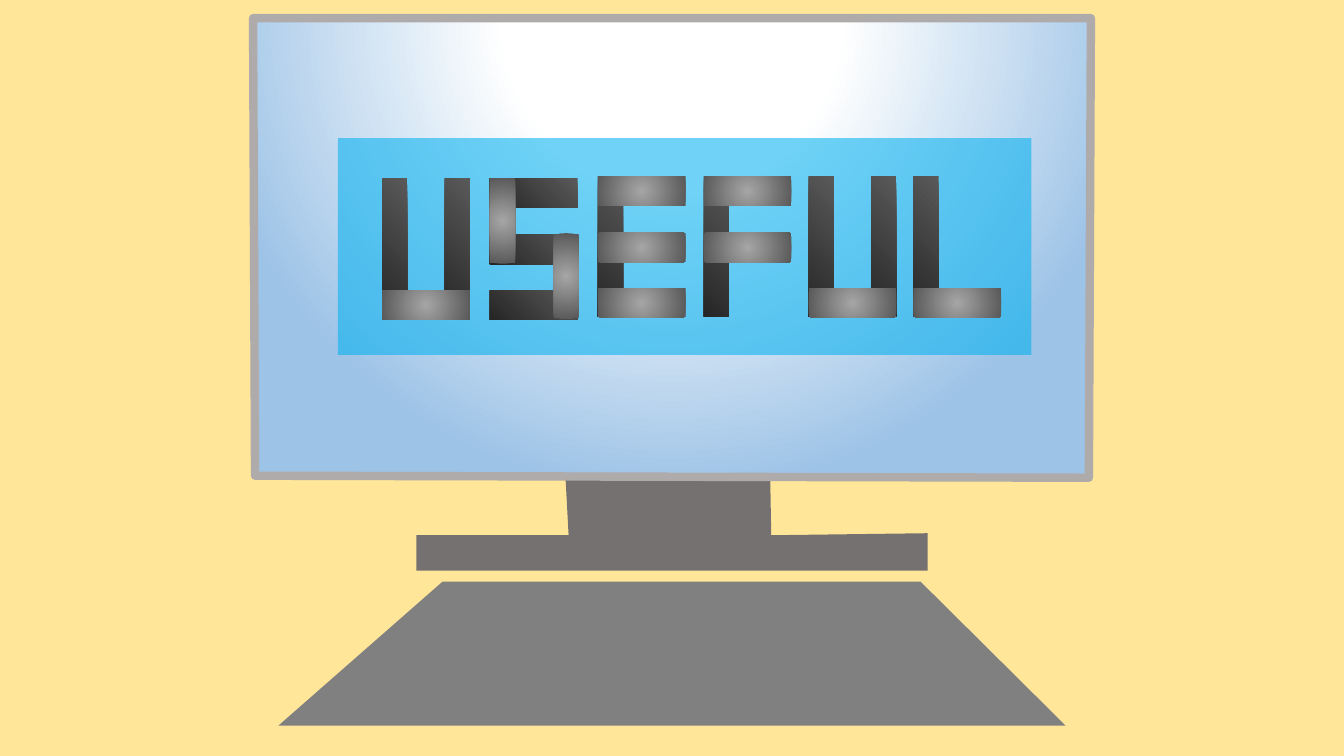
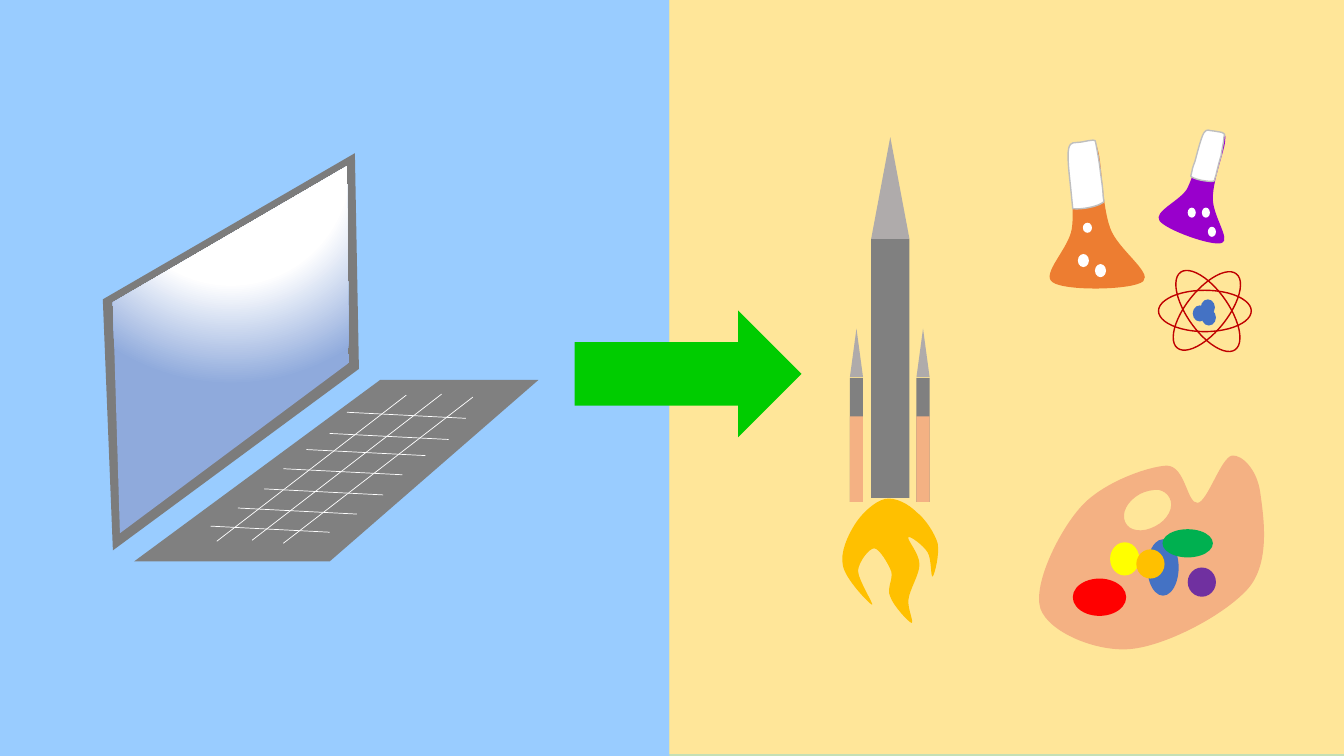
from dataclasses import dataclass

from lxml.etree import SubElement
from pptx import Presentation
from pptx.dml.color import RGBColor
from pptx.enum.shapes import MSO_CONNECTOR, MSO_SHAPE
from pptx.oxml.ns import qn
from pptx.util import Inches, Pt


@dataclass(frozen=True)
class Theme:
    """Colours, gradients and line widths shared by the slides."""
    cream: str = "FFE699"
    mint: str = "C5E0B4"
    sky: str = "99CCFF"
    grey: str = "808080"
    frame: str = "7C7C7C"
    stand: str = "767171"
    silver: str = "AFABAB"
    glass: str = "BFBFBF"
    white: str = "FFFFFF"
    panel: str = "00B0F0"
    arrow: str = "00CC00"
    peach: str = "F4B183"
    gold: str = "FFC000"
    blue: str = "4472C4"
    orange: str = "ED7D31"
    violet: str = "9900CC"
    orbit: str = "C00000"
    red: str = "FF0000"
    yellow: str = "FFFF00"
    green: str = "00B050"
    purple: str = "7030A0"
    dark_bar: tuple = ((0, "595959"), (100, "262626"))
    light_bar: tuple = ((0, "A6A6A6"), (100, "595959"))
    monitor_glow: tuple = ((0, "FFFFFF"), (35, "FFFFFF"), (100, "9DC3E6"))
    laptop_glow: tuple = ((0, "FFFFFF"), (54, "FFFFFF"), (100, "8FAADC"))
    top_focus: tuple = (50, -80, 50, 180)
    centre_focus: tuple = (50, 50, 50, 50)
    hairline: float = 0.5
    thin: float = 1
    bezel: float = 6


T = Theme()

BARS = {
    "left": (0, 0, 0.25, 1.39),
    "right": (0.62, 0, 0.25, 1.39),
    "top": (0, 0, 0.87, 0.29),
    "middle": (0, 0.56, 0.87, 0.29),
    "bottom": (0, 1.11, 0.87, 0.29),
    "upper": (0, 0, 0.25, 0.84),
    "lower": (0.63, 0.55, 0.25, 0.84),
}
GLYPHS = {
    "U": (("left", "right"), ("bottom",)),
    "S": (("top", "middle", "bottom"), ("upper", "lower")),
    "E": (("left",), ("top", "middle", "bottom")),
    "F": (("left",), ("top", "middle")),
    "L": (("left",), ("bottom",)),
}


def paint(sp, fill=None, line=None, width=T.thin):
    """Set a solid or empty fill and outline, without shadow."""
    sp.shadow.inherit = False
    for target, color in ((sp.fill, fill), (sp.line.fill, line)):
        if color:
            target.solid()
            target.fore_color.rgb = RGBColor.from_string(color)
        else:
            target.background()
    if line:
        sp.line.width = Pt(width)
    return sp


def shade(sp, stops, focus=None, angle=135):
    """Give a shape a circular gradient around focus, or a linear one."""
    sp.fill.gradient()
    grad = sp.element.spPr.find(qn("a:gradFill"))
    for child in list(grad):
        grad.remove(child)
    gs_list = SubElement(grad, qn("a:gsLst"))
    for pos, color in stops:
        gs = SubElement(gs_list, qn("a:gs"), pos=str(pos * 1000))
        SubElement(gs, qn("a:srgbClr"), val=color)
    if focus:
        circle = SubElement(grad, qn("a:path"), {"path": "circle"})
        sides = {k: str(v * 1000) for k, v in zip("ltrb", focus)}
        SubElement(circle, qn("a:fillToRect"), sides)
    else:
        SubElement(grad, qn("a:lin"), ang=str(angle * 60000), scaled="0")


def bend(sp):
    """Turn each three line segments of a freeform into one Bezier curve."""
    lines = list(sp.element.iter(qn("a:lnTo")))
    for i in range(0, len(lines), 3):
        curve = lines[i].makeelement(qn("a:cubicBezTo"))
        lines[i].addprevious(curve)
        for ln in lines[i:i + 3]:
            curve.append(ln[0])
            ln.getparent().remove(ln)


class Region:
    """A part of a slide whose lengths are inches from its left top corner."""

    def __init__(self, shapes, left, top):
        self.shapes, self.left, self.top = shapes, left, top

    def at(self, x, y):
        """Return slide coordinates of a point in the region."""
        return Inches(self.left + x), Inches(self.top + y)

    def shape(self, kind, box, fill=None, line=None):
        """Add a preset shape."""
        x, y, w, h = box
        sp = self.shapes.add_shape(kind, *self.at(x, y), Inches(w), Inches(h))
        return paint(sp, fill, line)

    def rect(self, box, fill=None):
        """Add a rectangle."""
        return self.shape(MSO_SHAPE.RECTANGLE, box, fill)

    def oval(self, box, fill=None, line=None):
        """Add an ellipse."""
        return self.shape(MSO_SHAPE.OVAL, box, fill, line)

    def polygon(self, contours, fill=None, line=None, width=T.thin):
        """Add a closed freeform made of straight contours."""
        first, *others = [[self.at(*pt) for pt in c] for c in contours]
        fb = self.shapes.build_freeform(*first[0], scale=1.0)
        fb.add_line_segments(first[1:], close=True)
        for contour in others:
            fb.move_to(*contour[0])
            fb.add_line_segments(contour[1:], close=True)
        return paint(fb.convert_to_shape(), fill, line, width)

    def curved(self, contours, fill, line=None):
        """Add a closed freeform made of Bezier contours."""
        bend(self.polygon(contours, fill, line))

    def segment(self, start, end, color, width):
        """Add a straight line."""
        cn = self.shapes.add_connector(
            MSO_CONNECTOR.STRAIGHT, *self.at(*start), *self.at(*end))
        cn.line.color.rgb = RGBColor.from_string(color)
        cn.line.width = Pt(width)
        SubElement(cn.element.spPr, qn("a:effectLst"))


def add_slide(prs, color):
    """Add a blank slide with a solid background."""
    slide = prs.slides.add_slide(prs.slide_layouts[6])
    fill = slide.background.fill
    fill.solid()
    fill.fore_color.rgb = RGBColor.from_string(color)
    return slide


def grouped(slide, left, top):
    """Return a region whose parts share a group."""
    return Region(slide.shapes.add_group_shape().shapes, left, top)


def draw_monitor(rg):
    """Draw the stand, keyboard and screen of the desktop computer."""
    rg.polygon([[(3.1, 4.57), (5.13, 4.58), (5.14, 5.13), (6.69, 5.11), (6.69, 5.48),
                 (1.62, 5.48), (1.62, 5.13), (3.13, 5.13)]], T.stand)
    rg.polygon([[(1.88, 5.59), (6.62, 5.59), (8.06, 7.02), (0.25, 7.02)]], T.grey)
    screen = rg.polygon([[(0, 0), (8.31, 0), (8.29, 4.56), (0.02, 4.54)]],
                        line=T.silver, width=T.bezel)
    shade(screen, T.monitor_glow, T.top_focus)


def draw_sign(rg):
    """Draw the translucent panel with its letters built from bars."""
    panel = rg.rect((0, 0, 6.88, 2.15), T.panel)
    color = panel.element.spPr.find(qn("a:solidFill"))[0]
    SubElement(color, qn("a:alpha"), val="56000")
    lefts = (0.44, 1.51, 2.58, 3.63, 4.67, 5.71)
    tops = (0.4, 0.4, 0.38, 0.38, 0.38, 0.38)
    for letter, left, top in zip("USEFUL", lefts, tops):
        styles = ((T.dark_bar, None), (T.light_bar, T.centre_focus))
        for names, (stops, focus) in zip(GLYPHS[letter], styles):
            for name in names:
                x, y, w, h = BARS[name]
                shade(rg.rect((left + x, top + y, w, h)), stops, focus)


def draw_flask(rg, body, neck, bubbles, color):
    """Draw a flask from its liquid, glass neck and bubbles."""
    rg.curved([body], color)
    rg.curved([neck], T.white, T.glass)
    for box in bubbles:
        rg.oval(box, T.white)


def draw_flasks(rg):
    """Draw the violet and the orange flask."""
    draw_flask(rg, [
        (1.93, 0.42), (1.89, 0.51), (1.84, 0.75), (1.77, 0.88), (1.69, 1), (1.44, 1.1),
        (1.5, 1.19), (1.56, 1.28), (2.03, 1.45), (2.12, 1.41), (2.21, 1.38), (2.02, 1.13),
        (2.03, 0.96), (2.03, 0.79), (2.14, 0.51), (2.15, 0.41), (2.16, 0.3), (2.15, 0.34),
        (2.08, 0.32), (2.02, 0.31), (2.03, 0.31), (1.98, 0.3), (1.94, 0.29), (1.96, 0.32),
        (1.93, 0.42)
    ], [
        (1.94, 0.32), (1.97, 0.27), (1.99, 0.3), (2.04, 0.3), (2.09, 0.31), (2.12, 0.31),
        (2.13, 0.32), (2.15, 0.33), (2.15, 0.33), (2.14, 0.36), (2.14, 0.4), (2.12, 0.48),
        (2.11, 0.55), (2.09, 0.61), (2.07, 0.7), (2.06, 0.74), (2.04, 0.78), (2.06, 0.8),
        (2.02, 0.8), (1.98, 0.8), (1.87, 0.79), (1.81, 0.75), (1.83, 0.68), (1.82, 0.68),
        (1.85, 0.61), (1.87, 0.54), (1.91, 0.37), (1.94, 0.32)
    ], [(x, y, 0.08, 0.1) for x, y in ((1.78, 1.06), (1.98, 1.25), (1.92, 1.06))], T.violet)
    draw_flask(rg, [
        (0.62, 0.61), (0.61, 0.75), (0.66, 1.07), (0.63, 1.27), (0.6, 1.47), (0.32, 1.72),
        (0.44, 1.8), (0.56, 1.89), (1.24, 1.88), (1.34, 1.79), (1.43, 1.7), (1.08, 1.47),
        (1.01, 1.26), (0.93, 1.04), (0.93, 0.63), (0.89, 0.49), (0.85, 0.35), (0.87, 0.4),
        (0.77, 0.4), (0.68, 0.42), (0.7, 0.42), (0.63, 0.43), (0.57, 0.45), (0.62, 0.47),
        (0.62, 0.61)
    ], [
        (0.6, 0.47), (0.62, 0.4), (0.65, 0.42), (0.72, 0.41), (0.78, 0.4), (0.81, 0.39),
        (0.84, 0.39), (0.87, 0.39), (0.86, 0.39), (0.87, 0.43), (0.88, 0.48), (0.9, 0.59),
        (0.91, 0.67), (0.92, 0.76), (0.94, 0.87), (0.94, 0.93), (0.94, 0.99), (0.97, 1),
        (0.92, 1.02), (0.87, 1.05), (0.73, 1.08), (0.64, 1.07), (0.63, 0.97), (0.63, 0.97),
        (0.62, 0.87), (0.61, 0.77), (0.58, 0.55), (0.6, 0.47)
    ], [(0.69, 1.52, 0.11, 0.13), (0.86, 1.62, 0.11, 0.13), (0.74, 1.21, 0.09, 0.1)], T.orange)


def draw_atom(rg):
    """Draw three orbits around a nucleus."""
    for x, width, angle in ((0, 0.92, 0), (0.01, 0.94, 308.5), (0.02, 0.94, 234.9)):
        rg.oval((x, 0, width, 0.41), line=T.orbit).rotation = angle
    for x, y in ((0.34, 0.15), (0.43, 0.19), (0.42, 0.09)):
        rg.oval((x, y, 0.14, 0.16), T.blue)


def draw_rocket(rg):
    """Draw the rocket, its two boosters and the flame."""
    rg.rect((0.64, 1.37, 0.38, 2.57), T.grey)
    rg.shape(MSO_SHAPE.ISOSCELES_TRIANGLE, (0.64, 0.36, 0.38, 1.01), T.silver)
    for x in (0.43, 1.09):
        rg.rect((x, 2.75, 0.13, 1.23), T.grey)
        rg.shape(MSO_SHAPE.ISOSCELES_TRIANGLE, (x, 2.26, 0.13, 0.48), T.silver)
        rg.rect((x, 3.13, 0.13, 0.85), T.peach)
    rg.curved([[
        (0.36, 4.61), (0.33, 4.48), (0.41, 4.31), (0.48, 4.2), (0.55, 4.09), (0.68, 3.97),
        (0.78, 3.95), (0.88, 3.93), (1.01, 4), (1.09, 4.08), (1.18, 4.15), (1.27, 4.29),
        (1.3, 4.39), (1.32, 4.5), (1.27, 4.7), (1.25, 4.72), (1.23, 4.73), (1.24, 4.54),
        (1.2, 4.48), (1.16, 4.41), (1.02, 4.31), (1.01, 4.33), (0.99, 4.35), (1.12, 4.49),
        (1.12, 4.6), (1.12, 4.7), (1.02, 4.85), (1.01, 4.95), (1, 5.04), (1.07, 5.18),
        (1.04, 5.18), (1.01, 5.17), (0.86, 5.01), (0.83, 4.92), (0.79, 4.84), (0.86, 4.75),
        (0.84, 4.67), (0.81, 4.59), (0.72, 4.44), (0.67, 4.44), (0.62, 4.44), (0.52, 4.57),
        (0.51, 4.66), (0.51, 4.75), (0.67, 5), (0.65, 5), (0.62, 4.99), (0.38, 4.74),
        (0.36, 4.61)
    ]], T.gold)


def draw_palette(rg):
    """Draw the painter's palette with its thumb hole and colours."""
    hole = [
        (1.49, 0.86), (1.43, 0.86), (1.37, 0.87), (1.31, 0.9), (1.18, 0.97), (1.12, 1.09),
        (1.16, 1.18), (1.2, 1.27), (1.33, 1.29), (1.46, 1.22), (1.58, 1.16), (1.65, 1.03),
        (1.6, 0.94), (1.58, 0.9), (1.54, 0.87), (1.49, 0.86)]
    board = [
        (2.22, 0.52), (2.32, 0.51), (2.47, 0.66), (2.5, 0.89), (2.53, 1.11), (2.61, 1.59),
        (2.37, 1.85), (2.12, 2.12), (1.55, 2.41), (1.21, 2.44), (0.87, 2.47), (0.4, 2.27),
        (0.32, 2.04), (0.24, 1.8), (0.51, 1.26), (0.72, 1.03), (0.93, 0.79), (1.38, 0.63),
        (1.57, 0.62), (1.76, 0.62), (1.77, 1), (1.88, 0.99), (1.98, 0.97), (2.11, 0.54),
        (2.22, 0.52)]
    rg.curved([hole, board], T.peach)
    for box, color in (
            ((0.64, 1.74, 0.53, 0.37), T.red), ((1.01, 1.38, 0.29, 0.33), T.yellow),
            ((1.38, 1.35, 0.31, 0.56), T.blue), ((1.53, 1.25, 0.5, 0.28), T.green),
            ((1.78, 1.63, 0.28, 0.29), T.purple), ((1.27, 1.45, 0.28, 0.29), T.gold)):
        rg.oval(box, color)


def draw_laptop(rg):
    """Draw the laptop's screen and its keyboard with grid lines."""
    rg.polygon([[(0.02, 1.97), (2.52, 0.52), (2.56, 2.66), (0.12, 4.46)]], T.frame)
    screen = rg.polygon([[(0.12, 2), (2.44, 0.65), (2.46, 2.6), (0.19, 4.29)]])
    shade(screen, T.laptop_glow, T.top_focus)
    rg.polygon([[(0.33, 4.57), (2.77, 2.77), (4.34, 2.77), (2.27, 4.57)]], T.grey)
    rows = ((1.09, 4.22), (1.36, 4.04), (1.62, 3.85), (1.81, 3.65),
            (2.04, 3.46), (2.27, 3.3), (2.44, 3.09))
    columns = ((1.15, 4.37), (1.5, 4.36), (1.81, 4.39))
    for starts, dx, dy in ((rows, 1.18, 0.06), (columns, 1.88, -1.45)):
        for x, y in starts:
            rg.segment((x, y), (x + dx, y + dy), T.white, T.hairline)


def build_useful(prs):
    """Build the slide with the desktop computer."""
    slide = add_slide(prs, T.cream)
    draw_monitor(Region(slide.shapes, 2.51, 0.18))
    draw_sign(grouped(slide, 3.35, 1.37))


def build_uses(prs):
    """Build the slide leading from the laptop to science and art."""
    slide = add_slide(prs, T.mint)
    page = Region(slide.shapes, 0, 0)
    page.rect((0, 0, 6.64, 7.5), T.sky)
    page.rect((6.64, 0, 6.69, 7.48), T.cream)
    page.shape(MSO_SHAPE.RIGHT_ARROW, (5.7, 3.08, 2.25, 1.26), T.arrow)
    draw_flasks(grouped(slide, 10, 1))
    draw_atom(grouped(slide, 11.49, 2.88))
    draw_rocket(grouped(slide, 8, 1))
    draw_palette(grouped(slide, 10, 4))
    draw_laptop(grouped(slide, 1, 1))


def main():
    """Build and save the presentation."""
    prs = Presentation()
    prs.slide_width, prs.slide_height = Inches(13.33), Inches(7.5)
    build_useful(prs)
    build_uses(prs)
    prs.save("out.pptx")


if __name__ == "__main__":
    main()
